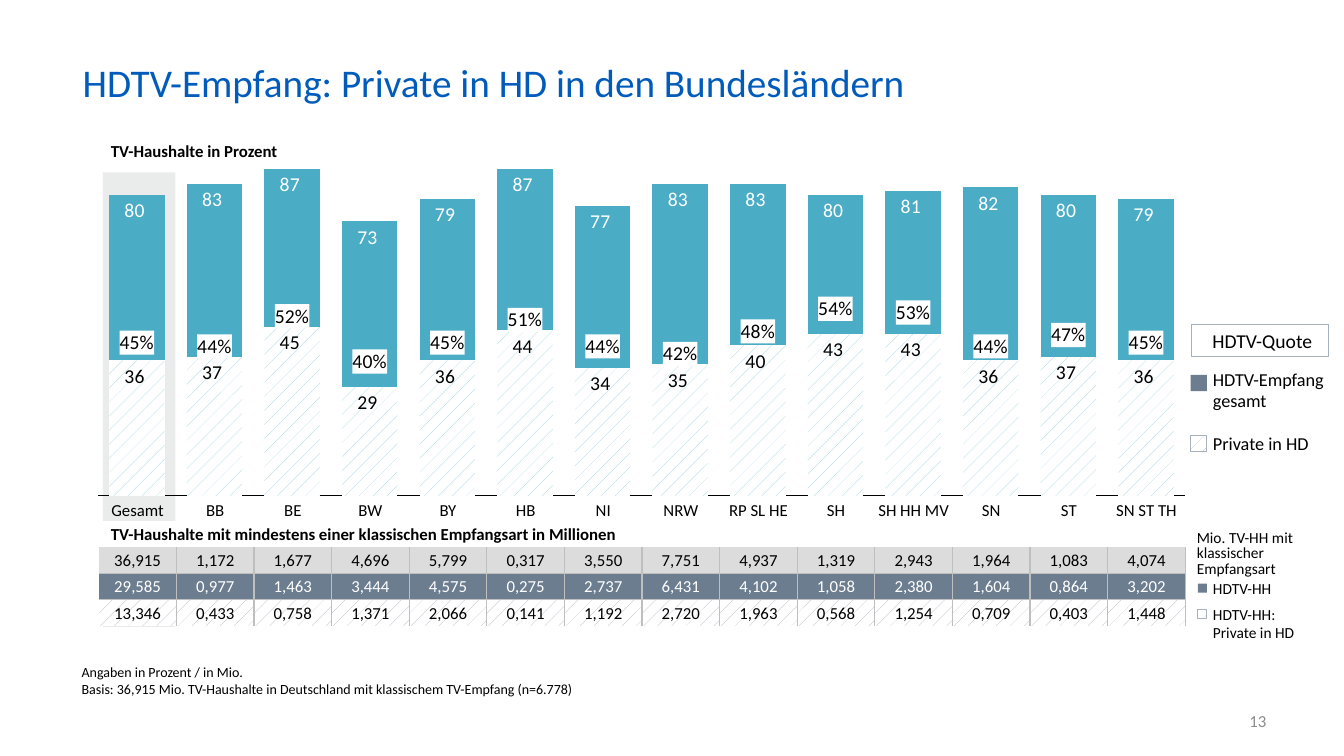
from copy import deepcopy
from dataclasses import dataclass
from lxml.etree import SubElement
from pptx import Presentation
from pptx.chart.data import CategoryChartData
from pptx.dml.color import RGBColor
from pptx.enum.chart import XL_CHART_TYPE, XL_LABEL_POSITION, XL_TICK_LABEL_POSITION, XL_TICK_MARK
from pptx.enum.dml import MSO_PATTERN
from pptx.enum.shapes import MSO_SHAPE
from pptx.enum.text import MSO_ANCHOR, MSO_AUTO_SIZE, PP_ALIGN
from pptx.oxml import parse_xml
from pptx.oxml.ns import nsdecls, qn
from pptx.util import Inches, Pt


@dataclass
class Theme:
    face: str = "Calibri"
    black: str = "000000"
    white: str = "FFFFFF"
    title: str = "005BBB"
    teal: str = "4BACC6"
    aqua: str = "93CDDD"
    slate: str = "6B7D8F"
    mist: str = "A6B1BC"
    pale: str = "EAECEC"
    gray: str = "DCDCDC"
    rule: str = "BFBFBF"
    faint: str = "8C8C8C"
    head: int = 28
    label: int = 14
    key: int = 13
    body: int = 12
    small: int = 11
    note: int = 10


T = Theme()
WIDE, HIGH = 13.33, 7.5
LEFT, COL, ROW = 0.98, 0.77, 0.26    # table grid
TOP, FIRST = 4.7, 0.47               # table top and height of the state row

STATES = ["Gesamt", "BB", "BE", "BW", "BY", "HB", "NI", "NRW", "RP SL HE",
          "SH", "SH HH MV", "SN", "ST", "SN ST TH"]
QUOTA = [45, 44, 52, 40, 45, 51, 44, 42, 48, 54, 53, 44, 47, 45]
TOTAL = [80, 83, 87, 73, 79, 87, 77, 83, 83, 80, 81, 82, 80, 79]
PAID = [36, 37, 45, 29, 36, 44, 34, 35, 40, 43, 43, 36, 37, 36]
HOMES = """36,915 1,172 1,677 4,696 5,799 0,317 3,550 7,751 4,937 1,319 2,943 1,964 1,083 4,074
29,585 0,977 1,463 3,444 4,575 0,275 2,737 6,431 4,102 1,058 2,380 1,604 0,864 3,202
13,346 0,433 0,758 1,371 2,066 0,141 1,192 2,720 1,963 0,568 1,254 0,709 0,403 1,448"""


def rgb(tone):
    return RGBColor.from_string(tone)


def style(font, size, tone=T.black, bold=False):
    font.name, font.size, font.bold = T.face, Pt(size), bold
    font.color.rgb = rgb(tone)


def paint(fill, tone):
    """Solid for a colour, hatched for a tuple, clear for None."""
    if tone is None:
        fill.background()
    elif isinstance(tone, tuple):
        fill.patterned()
        fill.pattern = MSO_PATTERN.PERCENT_5
        fill.fore_color.rgb, fill.back_color.rgb = map(rgb, tone)
    else:
        fill.solid()
        fill.fore_color.rgb = rgb(tone)


def write(frame, lines, size, tone=T.black, bold=False, align=PP_ALIGN.LEFT,
          anchor=MSO_ANCHOR.TOP, wrap=True):
    frame.margin_left = frame.margin_right = frame.margin_top = frame.margin_bottom = 0
    frame.word_wrap, frame.auto_size = wrap, MSO_AUTO_SIZE.NONE
    frame.vertical_anchor = anchor
    frame.text = "\n".join(lines)
    for para in frame.paragraphs:
        para.alignment = align
        style(para.font, size, tone, bold)
    return frame.paragraphs


def text(slide, x, y, w, h, lines, size, **look):
    box = slide.shapes.add_textbox(Inches(x), Inches(y), Inches(w), Inches(h))
    return write(box.text_frame, lines, size, **look)


def block(slide, x, y, w, h, tone=None, line=None, width=0.75):
    box = slide.shapes.add_shape(MSO_SHAPE.RECTANGLE, Inches(x), Inches(y), Inches(w), Inches(h))
    box.shadow.inherit = False
    paint(box.fill, tone)
    paint(box.line.fill, line)
    if line:
        box.line.width = Pt(width)
    return box


def split(area):
    """Move the last series to hidden axes of its own."""
    first = area.find(qn("c:barChart"))
    second = deepcopy(first)
    first.addnext(second)
    first.remove(first.findall(qn("c:ser"))[-1])
    for ser in second.findall(qn("c:ser"))[:-1]:
        second.remove(ser)
    ids = ["50001", "50002"]
    for node, new in zip(second.findall(qn("c:axId")), ids):
        node.set("val", new)
    axes = [area.find(qn("c:catAx")), area.find(qn("c:valAx"))]
    for axis, own, other in zip(axes, ids, ids[::-1]):
        twin = deepcopy(axis)
        twin.find(qn("c:axId")).set("val", own)
        twin.find(qn("c:crossAx")).set("val", other)
        twin.find(qn("c:delete")).set("val", "1")
        axes[-1].addnext(twin)
    twin = area.findall(qn("c:valAx"))[-1]
    twin.find(qn("c:axPos")).set("val", "r")
    twin.find(qn("c:crosses")).set("val", "max")


def bars(slide):
    data = CategoryChartData()
    data.categories = [str(i + 1) for i in range(len(STATES))]
    looks = [(QUOTA, None, '0"%"', T.black),
             (TOTAL, T.teal, "0\\ ", T.white),
             (PAID, (T.aqua, T.white), "0\\ ", T.black)]
    for i, look in enumerate(looks):
        data.add_series(f"Series {i + 1}", look[0])
    chart = slide.shapes.add_chart(XL_CHART_TYPE.COLUMN_CLUSTERED, Inches(0.66), Inches(0.79),
                                   Inches(11.17), Inches(5.5), data).chart
    chart.has_legend = chart.has_title = False
    style(chart.font, 18)
    for axis in (chart.category_axis, chart.value_axis):
        axis.visible, axis.has_major_gridlines = True, False
        axis.major_tick_mark = axis.minor_tick_mark = XL_TICK_MARK.NONE
        axis.tick_label_position = XL_TICK_LABEL_POSITION.NONE
    chart.category_axis.format.line.color.rgb = rgb(T.black)
    chart.category_axis.format.line.width = Pt(0.75)
    value = chart.value_axis
    value.format.line.fill.background()
    value.minimum_scale, value.maximum_scale = 0, 90
    value.tick_labels.number_format, value.tick_labels.number_format_is_linked = "0.0", False
    plot = chart.plots[0]
    plot.gap_width, plot.overlap, plot.vary_by_categories = 40, 100, False
    for series, (_, tone, form, ink) in zip(plot.series, looks):
        paint(series.format.fill, tone)
        series.invert_if_negative = False
        tags = series.data_labels
        tags.show_value, tags.position = True, XL_LABEL_POSITION.INSIDE_END
        tags.number_format, tags.number_format_is_linked = form, False
        style(tags.font, T.label, ink)
        if tone is None:    # white box behind the quota
            tags._element.find(qn("c:numFmt")).addnext(parse_xml(
                f'<c:spPr {nsdecls("c", "a")}><a:solidFill><a:srgbClr val="{T.white}"/>'
                '</a:solidFill></c:spPr>'))
    # Fixed inner plot area
    area = chart._chartSpace.chart.plotArea
    split(area)
    for old in area.findall(qn("c:layout")):
        area.remove(old)
    parts = [("layoutTarget", "inner"), ("xMode", "edge"), ("yMode", "edge"),
             ("x", 0.028), ("y", 0.14), ("w", 0.965), ("h", 0.611)]
    inner = "".join(f'<c:{tag} val="{val}"/>' for tag, val in parts)
    area.insert(0, parse_xml(f'<c:layout {nsdecls("c")}><c:manualLayout>{inner}'
                             '</c:manualLayout></c:layout>'))


def edge(cell, sides):
    props = cell._tc.get_or_add_tcPr()
    for i, side in enumerate("LRTB"):
        line = SubElement(props, qn(f"a:ln{side}"), w="12700")
        props.insert(i, line)
        if side in sides:
            SubElement(SubElement(line, qn("a:solidFill")), qn("a:srgbClr"), val=T.rule)
        else:
            SubElement(line, qn("a:noFill"))


def grid(slide):
    count = len(STATES)
    rows = [STATES,
            ["TV-Haushalte mit mindestens einer klassischen Empfangsart in Millionen"]
            + [""] * (count - 1)] + [line.split() for line in HOMES.split("\n")]
    fills = [None, T.white, T.gray, T.slate, (T.mist, T.white)]
    sides = ["", "", "LRB", "LRTB", "LRT"]
    table = slide.shapes.add_table(len(rows), count, Inches(LEFT), Inches(TOP), Inches(COL * count),
                                   Inches(FIRST + 4 * ROW)).table
    table.first_row = table.horz_banding = False
    for col in table.columns:
        col.width = Inches(COL)
    for r, row in enumerate(rows):
        table.rows[r].height = Inches(ROW if r else FIRST)
        for c, value in enumerate(row):
            cell, band = table.cell(r, c), r == 1
            para = cell.text_frame.paragraphs[0]
            para.text = value
            para.alignment = PP_ALIGN.LEFT if band else PP_ALIGN.CENTER
            style(para.font, T.body, T.white if r == 3 else T.black, band)
            if not value:
                SubElement(para._p, qn("a:endParaRPr"), sz=str(T.body * 100))
            cell.margin_left = Inches(0.12 if band else 0.01)
            cell.margin_right = cell.margin_top = Inches(0.01)
            cell.margin_bottom = 0
            cell.vertical_anchor = MSO_ANCHOR.MIDDLE if r else MSO_ANCHOR.BOTTOM
            paint(cell.fill, fills[r])
            edge(cell, sides[r] if c else sides[r].replace("L", ""))
    table.cell(1, 0).merge(table.cell(1, count - 2))


def legend(slide):
    hatch = (T.mist, T.white)
    # Chart keys
    quota = block(slide, 11.82, 3.22, 1.36, 0.32, line=T.mist)
    write(quota.text_frame, ["HDTV-Quote"], T.label, align=PP_ALIGN.CENTER, anchor=MSO_ANCHOR.MIDDLE)
    quota.text_frame.margin_left = Inches(0.04)
    block(slide, 11.81, 3.72, 0.16, 0.16, T.slate)
    block(slide, 11.81, 4.32, 0.16, 0.16, hatch, T.mist, 0.5)
    keys = text(slide, 12.03, 3.65, 1.3, 0.9, ["HDTV-Empfang", "gesamt", "Private in HD"], T.key)
    keys[2].space_before = Pt(15)
    # Table keys
    for para in text(slide, 11.87, 5.27, 1.4, 0.47,
                     ["Mio. TV-HH mit klassischer", "Empfangsart"], T.small):
        para.line_spacing = Pt(11)
    block(slide, 11.88, 5.79, 0.09, 0.09, T.slate)
    block(slide, 11.88, 6.05, 0.09, 0.09, hatch, T.mist)
    text(slide, 12.03, 5.75, 0.59, 0.19, ["HDTV-HH"], T.small, wrap=False)
    text(slide, 12.03, 6, 0.82, 0.37, ["HDTV-HH:", "Private in HD"], T.small, wrap=False)


def main():
    deck = Presentation()
    deck.slide_width, deck.slide_height = Inches(WIDE), Inches(HIGH)
    slide = deck.slides.add_slide(deck.slide_layouts[5])
    # Title
    title = slide.shapes.title
    title.left, title.top, title.width, title.height = map(Inches, (0.82, 0.58, 12.28, 0.59))
    write(title.text_frame, ["HDTV-Empfang: Private in HD in den Bundesländern"], T.head, tone=T.title)
    # Highlight of the first column, chart and table
    block(slide, 1.02, 1.71, 0.72, 4.51, T.pale)
    bars(slide)
    grid(slide)
    legend(slide)
    # Caption, footnote and page number
    text(slide, 1.1, 1.4, 2.4, 0.2, ["TV-Haushalte in Prozent"], T.body, bold=True,
         anchor=MSO_ANCHOR.MIDDLE)
    text(slide, 0.81, 6.61, 10.95, 0.31,
         ["Angaben in Prozent / in Mio.",
          "Basis: 36,915 Mio. TV-Haushalte in Deutschland mit klassischem TV-Empfang (n=6.778)"],
         T.note, anchor=MSO_ANCHOR.BOTTOM)
    text(slide, 9.56, 6.95, 3, 0.4, ["13"], T.body, tone=T.faint, align=PP_ALIGN.RIGHT,
         anchor=MSO_ANCHOR.MIDDLE)
    deck.save("out.pptx")


if __name__ == "__main__":
    main()
